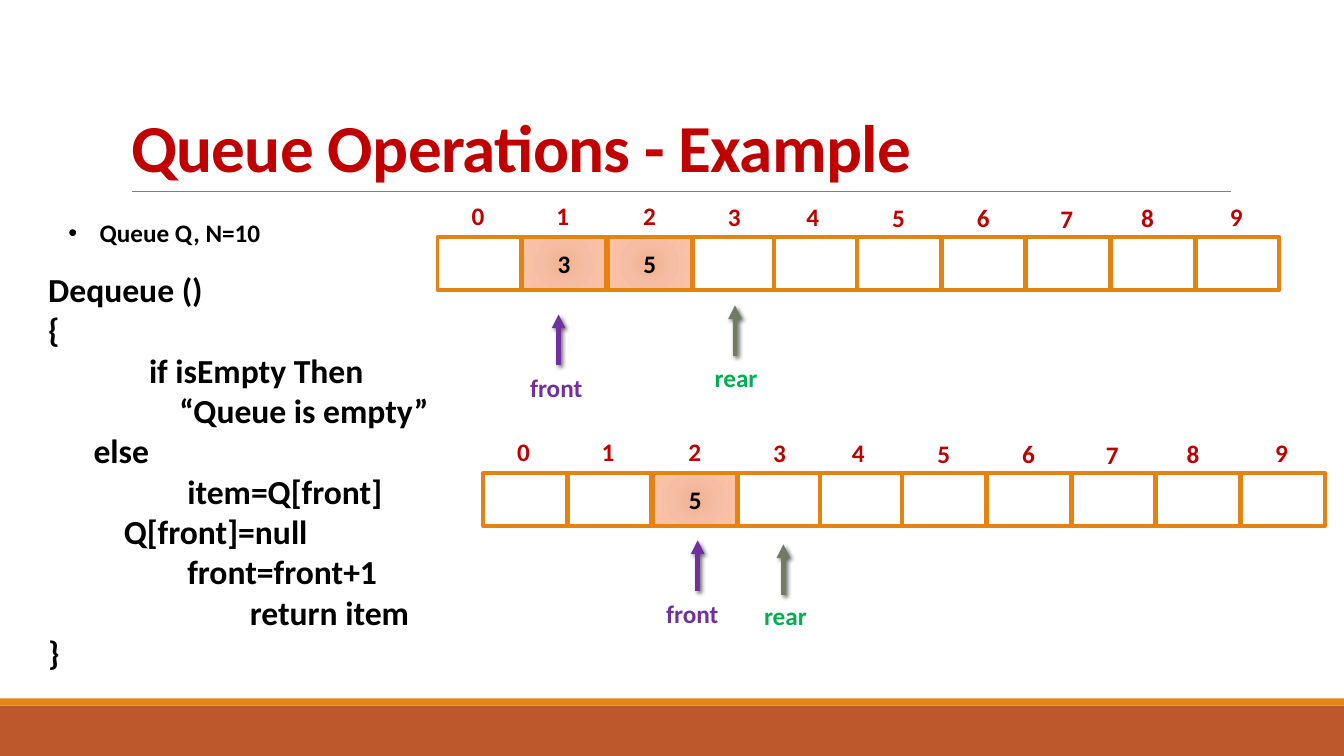
from pptx import Presentation
from pptx.dml.color import RGBColor
from pptx.enum.shapes import MSO_CONNECTOR, MSO_SHAPE
from pptx.enum.text import MSO_ANCHOR, MSO_AUTO_SIZE, PP_ALIGN
from pptx.oxml import parse_xml
from pptx.oxml.ns import nsdecls, qn
from pptx.util import Inches, Pt

RECT = MSO_SHAPE.RECTANGLE
STRAIGHT = MSO_CONNECTOR.STRAIGHT
LEFT, CENTER = PP_ALIGN.LEFT, PP_ALIGN.CENTER
MIDDLE, BOTTOM = MSO_ANCHOR.MIDDLE, MSO_ANCHOR.BOTTOM
FIT, FIXED = MSO_AUTO_SIZE.SHAPE_TO_FIT_TEXT, MSO_AUTO_SIZE.NONE

COLORS = {
    "red": "C00000", "black": "000000", "white": "FFFFFF", "rule": "808080",
    "orange": "E48312", "rust": "BD582C", "purple": "7030A0",
    "olive": "6F7B63", "green": "00B050",
}
GLOW = ((0, "F0B191"), (45, "F5BEA4"), (100, "FDC3A8"))
CELLS = (0, 0.84, 1.69, 2.53, 3.34, 4.16, 5, 5.84, 6.68, 7.52)
MARKS = ((0.24, 0), (1.08, 0), (1.94, 0), (2.78, 0.01), (3.56, 0.01),
         (4.41, 0.02), (5.25, 0.02), (6.08, 0.03), (6.88, 0.02), (7.76, 0.01))
CODE = (
    ("Dequeue ()", 0), ("{", 0), ("if isEmpty Then", 1),
    ("“Queue is empty”", 1.3), ("else", 0.45), ("item=Q[front]", 1.38),
    ("Q[front]=null", 0.75), ("front=front+1", 1.38),
    ("return item", 2), ("}", 0),
)
QUEUES = (
    {"left": 4.34, "top": 2.35, "items": {1: "3", 2: "5"}},
    {"left": 4.79, "top": 4.69, "items": {2: "5"}},
)
POINTERS = (
    ("front", 5.54, 3.12, 5.16, 3.64), ("rear", 7.29, 3.03, 6.99, 3.55),
    ("front", 6.92, 5.36, 6.51, 5.89), ("rear", 7.77, 5.4, 7.48, 5.91),
)
INKS = {"front": ("purple", "purple", 0.76), "rear": ("olive", "green", 0.69)}


def tint(name):
    return RGBColor.from_string(COLORS[name])


def write(par, text, size=18, color="black", align=LEFT, indent=0, bullet=None):
    run = par.add_run()
    run.text = text
    font = run.font
    font.name, font.size, font.bold = "Calibri", Pt(size), True
    font.color.rgb = tint(color)
    par.alignment = align
    props = par._p.get_or_add_pPr()
    if indent:
        props.set("marL", str(Inches(indent)))
    if bullet:
        props.set("indent", str(-Inches(indent)))
        props.append(parse_xml(f'<a:buFont {nsdecls("a")} typeface="Arial"/>'))
        props.append(parse_xml(f'<a:buChar {nsdecls("a")} char="{bullet}"/>'))
    return run


class Board:
    def __init__(self, slide):
        self.slide = slide
        self.shapes = slide.shapes

    def title(self, text, *box):
        shape = self.shapes.title
        shape.left, shape.top, shape.width, shape.height = map(Inches, box)
        frame = shape.text_frame
        frame.auto_size, frame.vertical_anchor = FIXED, BOTTOM
        par = frame.paragraphs[0]
        run = write(par, text, size=48, color="red")
        par.line_spacing = 0.85
        run._r.get_or_add_rPr().set("spc", "-50")

    def rect(self, *box, fill, edge=None):
        shape = self.shapes.add_shape(RECT, *map(Inches, box))
        shape.shadow.inherit = False
        shape.fill.solid()
        shape.fill.fore_color.rgb = tint(fill)
        if edge:
            shape.line.color.rgb = tint(edge)
            shape.line.width = Pt(2.75)
        else:
            shape.line.fill.background()
        return shape

    def cell(self, left, top, item):
        shape = self.rect(left, top, 0.83, 0.53, fill="white", edge="orange")
        if item:
            stops = "".join(
                f'<a:gs pos="{pos * 1000}"><a:srgbClr val="{shade}"/></a:gs>'
                for pos, shade in GLOW)
            props = shape._element.spPr
            props.replace(props.find(qn("a:solidFill")), parse_xml(
                f'<a:gradFill {nsdecls("a")}><a:gsLst>{stops}</a:gsLst>'
                '<a:path path="circle"><a:fillToRect l="100000" t="100000" '
                'r="100000" b="100000"/></a:path></a:gradFill>'))
            frame = shape.text_frame
            frame.vertical_anchor = MIDDLE
            write(frame.paragraphs[0], item, align=CENTER)

    def text(self, lines, *box, wrap=False, **style):
        frame = self.shapes.add_textbox(*map(Inches, box)).text_frame
        frame.word_wrap, frame.auto_size = wrap, FIT
        for row, (line, indent) in enumerate(lines):
            par = frame.add_paragraph() if row else frame.paragraphs[0]
            write(par, line, indent=indent, **style)

    def line(self, *ends, color, width):
        line = self.shapes.add_connector(STRAIGHT, *map(Inches, ends))
        line.line.color.rgb = tint(color)
        line.line.width = Pt(width)
        glow = parse_xml(f'<a:effectLst {nsdecls("a")}/>')
        line._element.spPr.append(glow)
        return line, glow

    def arrow(self, left, top, color):
        line, glow = self.line(left, top + 0.5, left, top, color=color, width=3.25)
        line.line._get_or_add_ln().append(
            parse_xml(f'<a:tailEnd {nsdecls("a")} type="triangle"/>'))
        glow.append(parse_xml(
            f'<a:outerShdw {nsdecls("a")} blurRad="{Pt(3)}" dist="{Pt(2)}" '
            'dir="2700000" rotWithShape="0"><a:srgbClr val="000000">'
            '<a:alpha val="60000"/></a:srgbClr></a:outerShdw>'))

    def queue(self, left, top, items):
        for spot in (*range(1, len(CELLS)), 0):
            self.cell(left + CELLS[spot], top, items.get(spot))
        for spot, (dx, dy) in enumerate(MARKS):
            self.text([(str(spot), 0)], left + dx, top - 0.41 + dy, 0.34, 0.4,
                      color="red")

    def pointer(self, name, tip, top, left, base):
        shaft, ink, width = INKS[name]
        self.arrow(tip, top, shaft)
        self.text([(name, 0)], left, base, width, 0.4, color=ink)


def main():
    deck = Presentation()
    deck.slide_width, deck.slide_height = Inches(13.33), Inches(7.5)
    board = Board(deck.slides.add_slide(deck.slide_layouts[5]))
    board.rect(0, 7, 13.33, 0.5, fill="rust")
    board.rect(0, 6.93, 13.33, 0.07, fill="orange")
    board.line(1.31, 1.9, 12.21, 1.9, color="rule", width=0.5)
    board.title("Queue Operations - Example", 1.2, 0.31, 11, 1.59)
    board.text([("Queue Q, N=10", 0.31)], 0.58, 2.11, 2.47, 0.4,
               wrap=True, bullet="•")
    board.text(CODE, 0.38, 2.62, 4.24, 4.14, wrap=True, size=24)
    for queue in QUEUES:
        board.queue(**queue)
    for pointer in POINTERS:
        board.pointer(*pointer)
    deck.save("out.pptx")


if __name__ == "__main__":
    main()
